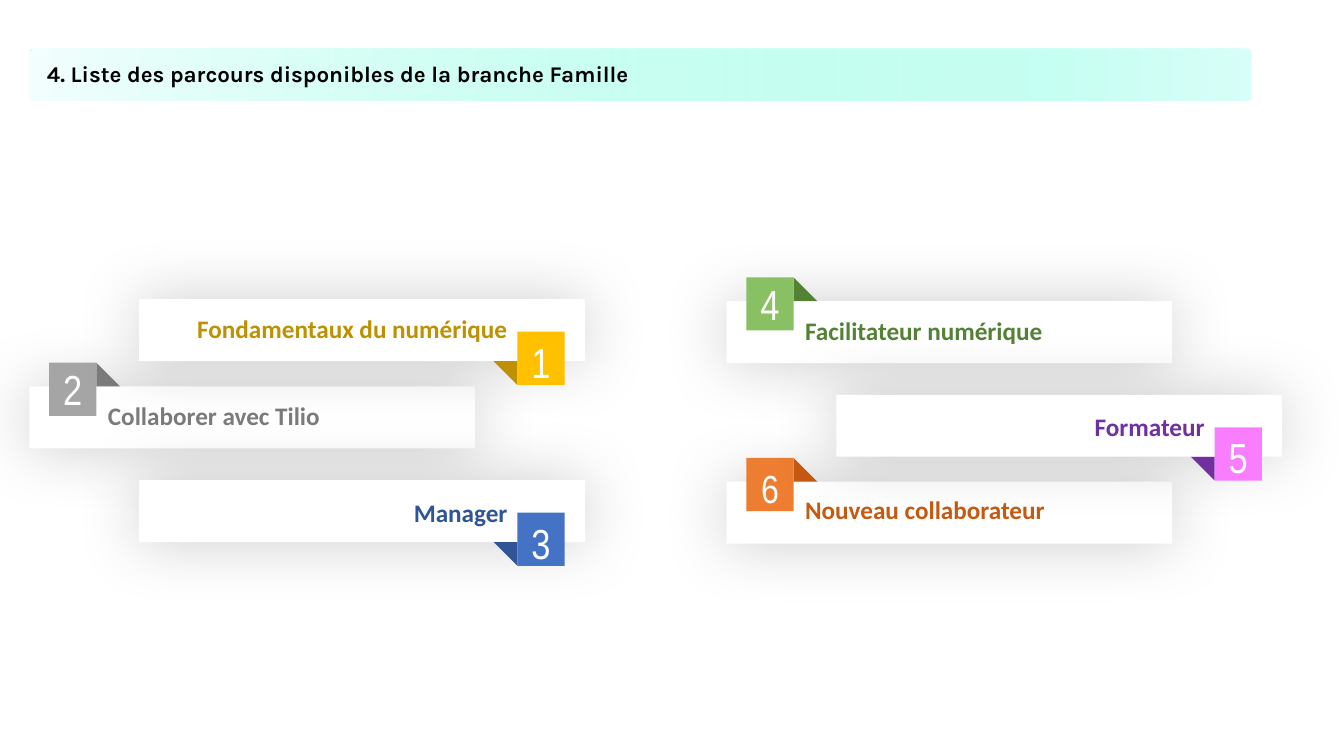
import pptx
import pptx.util
import pptx.dml.color
import pptx.enum.shapes
import pptx.enum.text
from lxml import etree

Cm = pptx.util.Cm
RGBColor = pptx.dml.color.RGBColor
SHAPE = pptx.enum.shapes.MSO_SHAPE
ALIGN = pptx.enum.text.PP_ALIGN

# Content
HEADING = "4. Liste des parcours disponibles de la branche Famille"

WHITE = RGBColor(0xFF, 0xFF, 0xFF)
BLACK = RGBColor(0x00, 0x00, 0x00)
GREEN, DARK_GREEN = RGBColor(0x89, 0xC0, 0x64), RGBColor(0x54, 0x82, 0x35)
ORANGE, DARK_ORANGE = RGBColor(0xED, 0x7D, 0x31), RGBColor(0xC5, 0x5A, 0x11)
PINK, PURPLE = RGBColor(0xF9, 0x7D, 0xFF), RGBColor(0x70, 0x30, 0xA0)
GREY, DARK_GREY = RGBColor(0xA5, 0xA5, 0xA5), RGBColor(0x7B, 0x7B, 0x7B)
GOLD, DARK_GOLD = RGBColor(0xFF, 0xC0, 0x00), RGBColor(0xBF, 0x90, 0x00)
BLUE, DARK_BLUE = RGBColor(0x44, 0x72, 0xC4), RGBColor(0x2F, 0x55, 0x97)

# Number, label, side of the badge, bar left and top, label drop (cm), colours;
# from back to front
COURSES = [
    ("4", "Facilitateur numérique", "left", 18.31, 7.59, 0.23, GREEN, DARK_GREEN),
    ("6", "Nouveau collaborateur", "left", 18.31, 12.14, 0.2, ORANGE, DARK_ORANGE),
    ("5", "Formateur", "right", 21.08, 9.95, 0.28, PINK, PURPLE),
    ("2", "Collaborer avec Tilio", "left", 0.74, 9.74, 0.23, GREY, DARK_GREY),
    ("1", "Fondamentaux du numérique", "right", 3.51, 7.54, 0.23, GOLD, DARK_GOLD),
    ("3", "Manager", "right", 3.51, 12.1, 0.3, BLUE, DARK_BLUE),
]
# Position %, colour, opacity %
BANNER_STOPS = [(0, "F3FFFE", 100), (74, "8DFFE4", 50), (83, "8DFFE7", 50), (100, "B3FFF4", 50)]

# Sizes in cm
BAR_W, BAR_H = 11.23, 1.56
BADGE_W, BADGE_H = 1.19, 1.34
FOLD = 0.6
DIGIT_W, DIGIT_H = 1.73, 1.35
LABEL_W, LABEL_H = 9.4, 1.02
# Offsets from the bar corner, by side of the badge
BADGE_AT = {"left": (0.5, -FOLD), "right": (9.53, 0.82)}
FOLD_AT = {"left": (0.5 + BADGE_W, -FOLD), "right": (9.53 - FOLD, BAR_H)}
DIGIT_DROP = {"left": 0.15, "right": 0.23}
LABEL_X = {"left": 1.73, "right": 9.53 - LABEL_W}

A = "http://schemas.openxmlformats.org/drawingml/2006/main"

prs = pptx.Presentation()
prs.slide_width, prs.slide_height = Cm(33.87), Cm(19.05)
slide = prs.slides.add_slide(prs.slide_layouts[5])


def place(shape, x, y, w, h):
    shape.left, shape.top, shape.width, shape.height = Cm(x), Cm(y), Cm(w), Cm(h)


def add_block(kind, x, y, w, h, fill):
    block = slide.shapes.add_shape(kind, Cm(x), Cm(y), Cm(w), Cm(h))
    block.shadow.inherit = False
    block.line.fill.background()
    block.fill.solid()
    block.fill.fore_color.rgb = fill
    return block


def write(text, box, font, size, color, bold=False, align=ALIGN.LEFT, spacing=1.0):
    frame = box.text_frame
    frame.word_wrap = True
    frame.auto_size = pptx.enum.text.MSO_AUTO_SIZE.NONE
    frame.vertical_anchor = pptx.enum.text.MSO_ANCHOR.TOP
    paragraph = frame.paragraphs[0]
    paragraph.alignment, paragraph.line_spacing = align, spacing
    run = paragraph.add_run()
    run.text = text
    run.font.name, run.font.size, run.font.bold = font, pptx.util.Pt(size), bold
    run.font.color.rgb = color


def add_text(text, x, y, w, h, **style):
    write(text, slide.shapes.add_textbox(Cm(x), Cm(y), Cm(w), Cm(h)), **style)


def add_glow_shadow(bar):
    effects = bar.element.spPr.find(f"{{{A}}}effectLst")
    effects.append(etree.fromstring(
        f'<a:outerShdw xmlns:a="{A}" blurRad="{pptx.util.Pt(47)}" dist="0" algn="ctr" '
        'rotWithShape="0"><a:srgbClr val="000000"><a:alpha val="20000"/></a:srgbClr></a:outerShdw>'))


def set_gradient(shape, stops):
    gradient = "".join(
        f'<a:gs pos="{pos * 1000}"><a:srgbClr val="{color}">'
        f'<a:alpha val="{opacity * 1000}"/></a:srgbClr></a:gs>'
        for pos, color, opacity in stops)
    solid = shape.element.spPr.find(f"{{{A}}}solidFill")
    solid.getparent().replace(solid, etree.fromstring(
        f'<a:gradFill xmlns:a="{A}" rotWithShape="1"><a:gsLst>{gradient}</a:gsLst>'
        '<a:lin ang="0" scaled="0"/></a:gradFill>'))


# Heading on its banner
heading = slide.shapes.title
place(heading, 0.93, 1.4, 29.64, 0.94)
write(HEADING, heading, font="Karla", size=16, color=BLACK, bold=True)
banner = add_block(SHAPE.ROUNDED_RECTANGLE, 0.74, 1.23, 30.8, 1.3, WHITE)
banner.adjustments[0] = 0.12
set_gradient(banner, BANNER_STOPS)
heading.element.addprevious(banner.element)

# Courses: bar, label, folded badge, number
for number, label, side, x, y, label_drop, color, dark in COURSES:
    add_glow_shadow(add_block(SHAPE.RECTANGLE, x, y, BAR_W, BAR_H, WHITE))
    add_text(label, x + LABEL_X[side], y + label_drop, LABEL_W, LABEL_H,
             font="Calibri", size=18, color=dark, bold=True,
             align=ALIGN.LEFT if side == "left" else ALIGN.RIGHT)

    fold_x, fold_y = FOLD_AT[side]
    fold = add_block(SHAPE.RIGHT_TRIANGLE, x + fold_x, y + fold_y, FOLD, FOLD, dark)
    fold.rotation = 0 if side == "left" else 180

    badge_x, badge_y = x + BADGE_AT[side][0], y + BADGE_AT[side][1]
    add_block(SHAPE.RECTANGLE, badge_x, badge_y, BADGE_W, BADGE_H, color)
    smaller = number == "6"
    add_text(number, badge_x + (BADGE_W - DIGIT_W) / 2,
             badge_y + (0.03 if smaller else DIGIT_DROP[side]), DIGIT_W, DIGIT_H,
             font="Arial Narrow", size=28 if smaller else 30, color=WHITE,
             align=ALIGN.CENTER, spacing=1.0 if smaller else 0.8)

prs.save("out.pptx")
